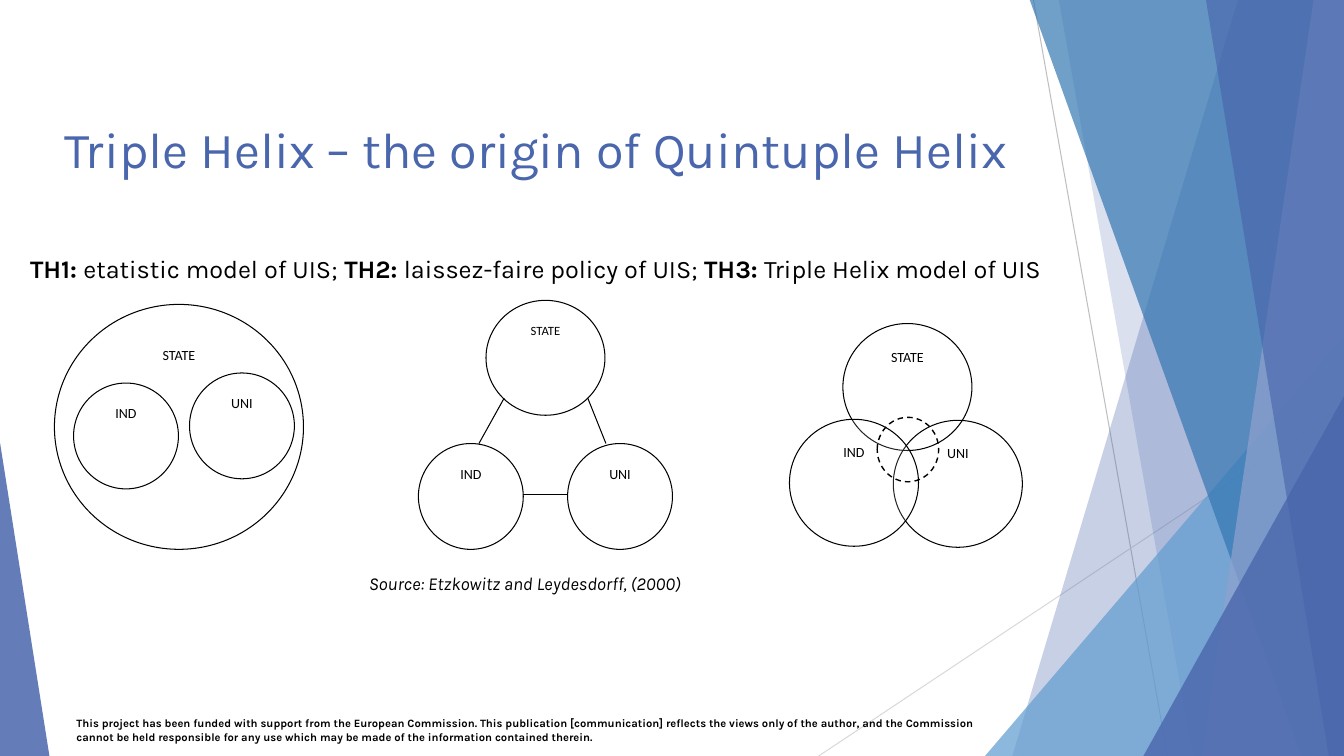
from lxml import etree
from pptx import Presentation
from pptx.dml.color import RGBColor
from pptx.enum.dml import MSO_LINE
from pptx.enum.shapes import MSO_CONNECTOR, MSO_SHAPE
from pptx.enum.text import MSO_ANCHOR, PP_ALIGN
from pptx.oxml.ns import qn
from pptx.util import Pt

PX = 9144  # 100 px to the inch
WIDTH, HEIGHT = 1333, 750
STRAIGHT = MSO_CONNECTOR.STRAIGHT
OVAL, TRIANGLE = MSO_SHAPE.OVAL, MSO_SHAPE.ISOSCELES_TRIANGLE
DASH = MSO_LINE.DASH
TOP, BOTTOM = MSO_ANCHOR.TOP, MSO_ANCHOR.BOTTOM
CENTER = PP_ALIGN.CENTER

BLACK = RGBColor(0x00, 0x00, 0x00)
WHITE = RGBColor(0xFF, 0xFF, 0xFF)
INDIGO = RGBColor(0x4A, 0x66, 0xAC)
SKY = RGBColor(0x62, 0x9D, 0xD1)
BLUE = RGBColor(0x34, 0x77, 0xB2)
LAVENDER = RGBColor(0x90, 0xA2, 0xCF)
GREY = RGBColor(0xBF, 0xBF, 0xBF)
PALE_GREY = RGBColor(0xD9, 0xD9, 0xD9)

prs = Presentation()
prs.slide_width, prs.slide_height = WIDTH * PX, HEIGHT * PX
slide = prs.slides.add_slide(prs.slide_layouts[6])
shapes = slide.shapes


def paint(shape, colour, opacity):
    """Fill a shape with a colour at an opacity in percent."""
    shape.fill.solid()
    shape.fill.fore_color.rgb = colour
    if opacity < 100:
        colour_xml = shape.fill._xPr.find(qn("a:solidFill"))[0]
        etree.SubElement(colour_xml, qn("a:alpha"), val=str(opacity * 1000))


def add_line(x1, y1, x2, y2, colour):
    line = shapes.add_connector(STRAIGHT, x1 * PX, y1 * PX, x2 * PX, y2 * PX)
    line.line.color.rgb = colour
    line.line.width = Pt(0.75)
    etree.SubElement(line._element.spPr, qn("a:effectLst"))


# Thin lines behind the facets
add_line(1025, 0, 1158, HEIGHT, GREY)
add_line(WIDTH, 403, 812, HEIGHT, PALE_GREY)

# Facets: bands run from a top x and a bottom x to the right edge;
# triangles have left, top, width, and the place of their tip
facets = [
    ("band", (1228, 1004), INDIGO, 30),
    ("band", (1050, 1183), INDIGO, 20),
    ("triangle", (977, 333, 356, 1), SKY, 72),
    ("band", (1021, 1291), BLUE, 70),
    ("band", (1303, 1192), LAVENDER, 70),
    ("band", (1196, 1318), INDIGO, 65),
    ("triangle", (1134, 393, 199, 1), INDIGO, 80),
    ("triangle", (0, 439, 49, 0), INDIGO, 85),
]
for kind, place, colour, opacity in facets:
    if kind == "band":
        top_x, bottom_x = place
        outline = shapes.build_freeform(top_x, -1, scale=PX)
        outline.add_line_segments(
            [(WIDTH, -1), (WIDTH, HEIGHT), (bottom_x, HEIGHT)], close=True)
        facet = outline.convert_to_shape()
    else:
        left, top, width, tip = place
        facet = shapes.add_shape(TRIANGLE, left * PX, top * PX,
                                 width * PX, (HEIGHT - top) * PX)
        facet.adjustments[0] = tip
    facet.shadow.inherit = False
    facet.line.fill.background()
    paint(facet, colour, opacity)

# Circles of the three models: label, left, top, width, height, text size, opacity
circles = [
    # TH2
    ("STATE", 482, 298, 118, 114, 9, 100),
    ("IND", 415, 440, 104, 105, 10, 100),
    ("UNI", 563, 440, 104, 105, 10, 100),
    # TH3
    ("STATE", 836, 321, 128, 126, 10, 100),
    ("UNI", 886, 417, 128, 126, 10, 0),
    ("IND", 783, 416, 128, 126, 10, 15),
    # TH1
    ("STATE", 54, 302, 247, 243, 10, 100),
    ("UNI", 188, 370, 104, 105, 10, 100),
    ("IND", 73, 380, 104, 105, 10, 100),
    # Overlap of TH3
    ("", 870, 414, 61, 64, 10, 0),
]
for label, left, top, width, height, size, opacity in circles:
    circle = shapes.add_shape(OVAL, left * PX, top * PX, width * PX, height * PX)
    circle.shadow.inherit = False
    if opacity:
        paint(circle, WHITE, opacity)
    else:
        circle.fill.background()
    circle.line.color.rgb = BLACK
    circle.line.width = Pt(0.75)
    if not label:
        circle.line.width = Pt(1)
        circle.line.dash_style = DASH
        continue
    circle.text_frame.vertical_anchor = TOP
    paragraph = circle.text_frame.paragraphs[0]
    paragraph.text = label
    paragraph.alignment = CENTER
    paragraph.line_spacing = 1.07
    paragraph.space_after = Pt(8)
    paragraph.font.name = "Calibri"
    paragraph.font.size = Pt(size)
    paragraph.font.color.rgb = BLACK

# Links between the TH2 circles
for x1, y1, x2, y2 in [(519, 491, 563, 491), (475, 440, 500, 395), (601, 440, 583, 395)]:
    add_line(x1, y1, x2, y2, BLACK)

# Texts: box, size, colour, anchor, italic, runs as (words, bold)
texts = [
    ((54, 88, 985, 94), 36, INDIGO, BOTTOM, False,
     [("Triple Helix – the origin of Quintuple Helix", False)]),
    ((20, 246, 1086, 40), 18, BLACK, TOP, False,
     [("TH1: ", True), ("etatistic model of UIS;", False),
      (" TH2: ", True), ("laissez-faire policy of UIS; ", False),
      ("TH3: ", True), ("Triple Helix model of UIS", False)]),
    ((356, 563, 370, 54), 13, BLACK, TOP, True,
     [("Source: Etzkowitz and Leydesdorff, (2000)", False)]),
    ((66, 706, 946, 37), 8, BLACK, TOP, False,
     [("This project has been funded with support from the European Commission. "
       "This publication [communication] reflects the views only of the author, "
       "and the Commission cannot be held responsible for any use which may be "
       "made of the information contained therein.", True)]),
]
for box, size, colour, anchor, italic, runs in texts:
    frame = shapes.add_textbox(*(length * PX for length in box)).text_frame
    frame.word_wrap = True
    frame.vertical_anchor = anchor
    paragraph = frame.paragraphs[0]
    paragraph.font.name = "Karla"
    paragraph.font.size = Pt(size)
    paragraph.font.color.rgb = colour
    paragraph.font.italic = italic
    for words, bold in runs:
        run = paragraph.add_run()
        run.text = words
        run.font.bold = bold

prs.save("out.pptx")
